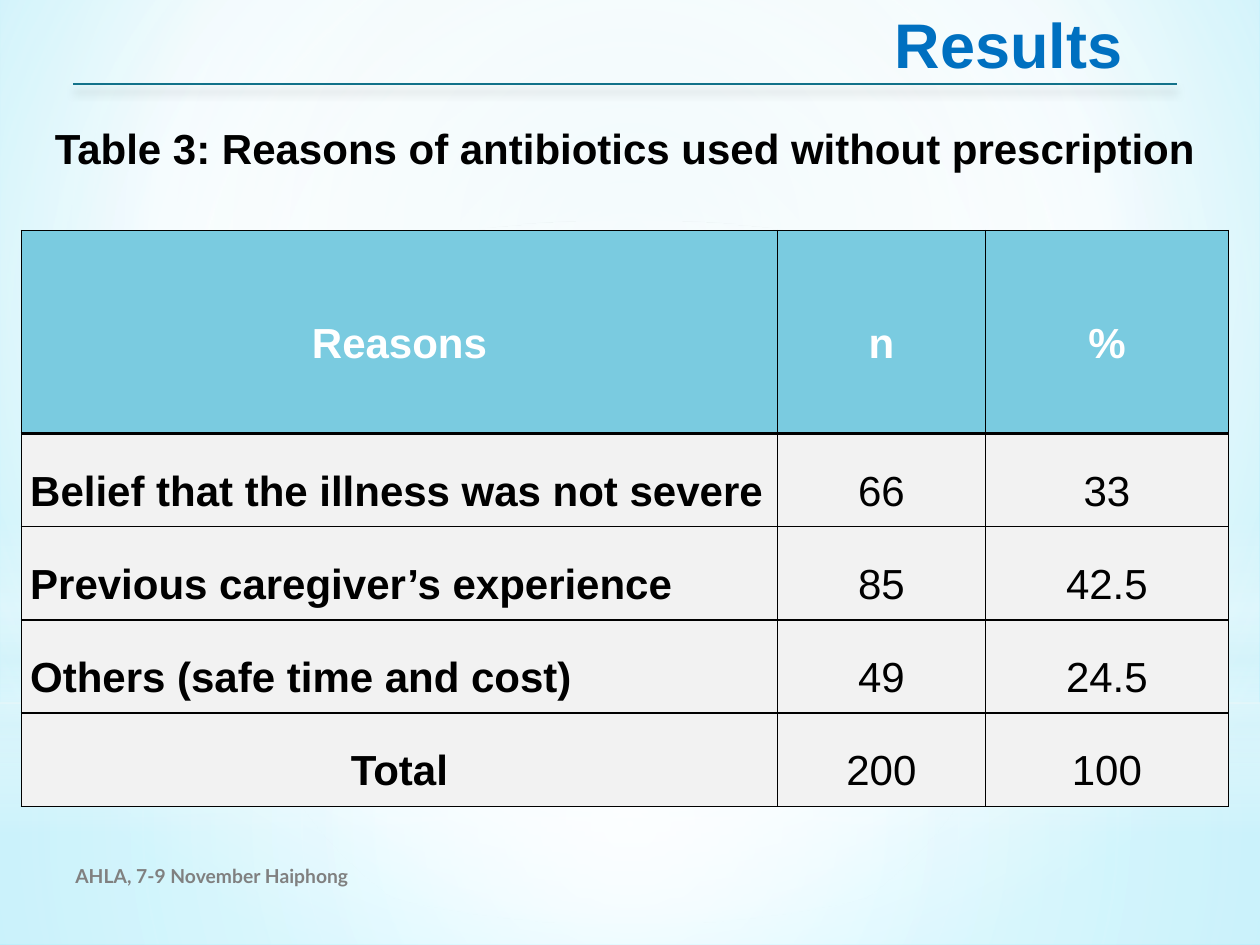
"""Build the results slide with the table of reasons for antibiotic use."""
import lxml.etree
import pptx
import pptx.dml.color
import pptx.enum.shapes
import pptx.enum.text
import pptx.oxml
import pptx.oxml.ns
import pptx.util

Inches = pptx.util.Inches
Pt = pptx.util.Pt
RGBColor = pptx.dml.color.RGBColor
Shape = pptx.enum.shapes.MSO_SHAPE
Align = pptx.enum.text.PP_ALIGN
Anchor = pptx.enum.text.MSO_ANCHOR
qn = pptx.oxml.ns.qn

BLACK = RGBColor(0x00, 0x00, 0x00)
WHITE = RGBColor(0xFF, 0xFF, 0xFF)
GRAY = RGBColor(0x80, 0x80, 0x80)
PALE_GRAY = RGBColor(0xF2, 0xF2, 0xF2)
BLUE = RGBColor(0x00, 0x70, 0xC0)
TEAL = RGBColor(0x12, 0x72, 0x8A)
HEADER_BLUE = RGBColor(0x7A, 0xCB, 0xE0)
MIST = RGBColor(0xDE, 0xF5, 0xFA)
ICE = RGBColor(0xCD, 0xEF, 0xF7)
SKY = RGBColor(0x7C, 0xE7, 0xFF)

CENTER = (50, 50, 50, 50)
HAZE = [
    (Shape.RECTANGLE, (0, 5.58, 10, 1.92),
     [(0, WHITE, 91), (37, WHITE, 76), (100, MIST, 79)], CENTER),
    (Shape.RECTANGLE, (0, 0, 10, 5.58),
     [(0, WHITE, 89), (48, WHITE, 62), (100, MIST, 79)], CENTER),
    (Shape.RECTANGLE, (0, 4.12, 10, 2.5),
     [(0, WHITE, 0), (29, WHITE, 30), (45, MIST, 40), (55, WHITE, 26),
      (65, MIST, 60), (100, WHITE, 0)], None),
    (Shape.OVAL, (0, 1.75, 10, 5.58),
     [(0, WHITE, 100), (56, WHITE, 0)], CENTER),
]
COLUMN_WIDTHS = (6, 1.65, 1.93)
ROW_HEIGHTS = (1.61, 0.74, 0.74, 0.74, 0.74)
REASONS = [
    ("Reasons", "n", "%"),
    ("Belief that the illness was not severe", "66", "33"),
    ("Previous caregiver’s experience", "85", "42.5"),
    ("Others (safe time and cost)", "49", "24.5"),
    ("Total", "200", "100"),
]


def add_element(parent, tag, **attributes):
    """Append a child element with the given attributes."""
    values = {name: str(value) for name, value in attributes.items()}
    return lxml.etree.SubElement(parent, qn(tag), values)


def add_color(parent, color, opacity=100):
    """Append a colour with its opacity in percent."""
    tint = add_element(parent, "a:srgbClr", val=color)
    if opacity < 100:
        add_element(tint, "a:alpha", val=opacity * 1000)


def set_gradient(fill, properties, stops, focus=None):
    """Fill with a circular gradient around focus, or a vertical one without it."""
    fill.solid()
    gradient = pptx.oxml.parse_xml(
        f"<a:gradFill {pptx.oxml.ns.nsdecls('a')} rotWithShape='1'/>")
    stop_list = add_element(gradient, "a:gsLst")
    for position, color, opacity in stops:
        stop = add_element(stop_list, "a:gs", pos=position * 1000)
        add_color(stop, color, opacity)
    if focus:
        circle = add_element(gradient, "a:path", path="circle")
        sides = {side: inset * 1000 for side, inset in zip("ltrb", focus)}
        add_element(circle, "a:fillToRect", **sides)
    else:
        add_element(gradient, "a:lin", ang=90 * 60000, scaled=0)
    properties.replace(properties.find(qn("a:solidFill")), gradient)


def add_background(page):
    """Paint the background and the translucent haze over it."""
    stops = [(0, ICE, 100), (60, WHITE, 100), (100, SKY, 100)]
    fill = page.background.fill
    fill.solid()
    properties = page.element.find(".//" + qn("p:bgPr"))
    set_gradient(fill, properties, stops, (20, 10, 20, 60))
    for kind, place, stops, focus in HAZE:
        haze = page.shapes.add_shape(kind, *map(Inches, place))
        haze.shadow.inherit = False
        haze.line.fill.background()
        set_gradient(haze.fill, haze.element.spPr, stops, focus)


def add_rule(page):
    """Draw the line under the title with its soft shadow."""
    rule = page.shapes.add_connector(
        pptx.enum.shapes.MSO_CONNECTOR.STRAIGHT,
        Inches(0.58), Inches(0.67), Inches(9.34), Inches(0.67))
    rule.line.color.rgb = TEAL
    rule.line.width = Pt(1.25)
    effects = add_element(rule.element.spPr, "a:effectLst")
    shadow = add_element(effects, "a:outerShdw", blurRad=Pt(5), dist=Pt(4),
                         dir=90 * 60000, rotWithShape=0)
    add_color(shadow, BLACK, 20)


def style_font(para, size, color, name="Arial", bold=True):
    """Set the font of a whole paragraph."""
    font = para.font
    font.name, font.size, font.bold = name, Pt(size), bold
    font.color.rgb = color


def write_text(box, text, size, color, name="Arial", align=Align.LEFT,
               anchor=Anchor.TOP, wrap=True):
    """Write one bold paragraph into a box."""
    frame = box.text_frame
    frame.text = text
    frame.word_wrap = wrap
    frame.vertical_anchor = anchor
    para = frame.paragraphs[0]
    para.alignment = align
    style_font(para, size, color, name)


def add_title(page):
    """Place the title at the top right."""
    title = page.shapes.title
    title.left, title.top = Inches(7), Inches(-0.01)
    title.width, title.height = Inches(2.03), Inches(0.71)
    write_text(title, "Results", 36, BLUE, wrap=False)


def add_label(page, place, *text, **style):
    """Add a text box with one paragraph."""
    write_text(page.shapes.add_textbox(*map(Inches, place)), *text, **style)


def set_borders(cell, bottom):
    """Draw black borders with the given bottom width."""
    properties = cell._tc.get_or_add_tcPr()
    widths = {"a:lnL": 1, "a:lnR": 1, "a:lnT": 1, "a:lnB": bottom}
    for tag, width in widths.items():
        border = add_element(properties, tag, w=Pt(width))
        add_color(add_element(border, "a:solidFill"), BLACK)


def format_cell(cell, text, header, label, centered):
    """Write and format one table cell."""
    set_borders(cell, 2 if header else 1)
    cell.fill.solid()
    cell.fill.fore_color.rgb = HEADER_BLUE if header else PALE_GRAY
    cell.margin_left = cell.margin_right = Inches(0.07)
    cell.margin_top = cell.margin_bottom = 0
    cell.vertical_anchor = Anchor.MIDDLE
    cell.text = text
    para = cell.text_frame.paragraphs[0]
    para.alignment = Align.CENTER if centered else Align.LEFT
    para.line_spacing = 1.5
    style_font(para, 24, WHITE if header else BLACK, bold=header or label)


def add_reasons_table(page):
    """Add the table of reasons."""
    frame = page.shapes.add_table(
        len(ROW_HEIGHTS), len(COLUMN_WIDTHS), Inches(0.17), Inches(1.83),
        Inches(sum(COLUMN_WIDTHS)), Inches(sum(ROW_HEIGHTS)))
    table = frame.table
    for column, width in zip(table.columns, COLUMN_WIDTHS):
        column.width = Inches(width)
    last = len(REASONS) - 1
    for i, (row, height) in enumerate(zip(table.rows, ROW_HEIGHTS)):
        row.height = Inches(height)
        for j, text in enumerate(REASONS[i]):
            format_cell(table.cell(i, j), text, header=i == 0, label=j == 0,
                        centered=j > 0 or i in (0, last))


def main():
    """Build and save the deck."""
    deck = pptx.Presentation()
    deck.slide_width, deck.slide_height = Inches(10), Inches(7.5)
    page = deck.slides.add_slide(deck.slide_layouts[5])
    add_background(page)
    add_rule(page)
    add_title(page)
    add_reasons_table(page)
    add_label(page, (0.17, 0.92, 9.58, 0.5),
              "Table 3: Reasons of antibiotics used without prescription",
              24, BLACK, align=Align.CENTER)
    add_label(page, (0.5, 6.75, 3.67, 0.4), "AHLA, 7-9 November Haiphong",
              11, GRAY, name="Lato", anchor=Anchor.MIDDLE)
    page.shapes._spTree.append(page.shapes.title.element)
    deck.save("out.pptx")


if __name__ == "__main__":
    main()
